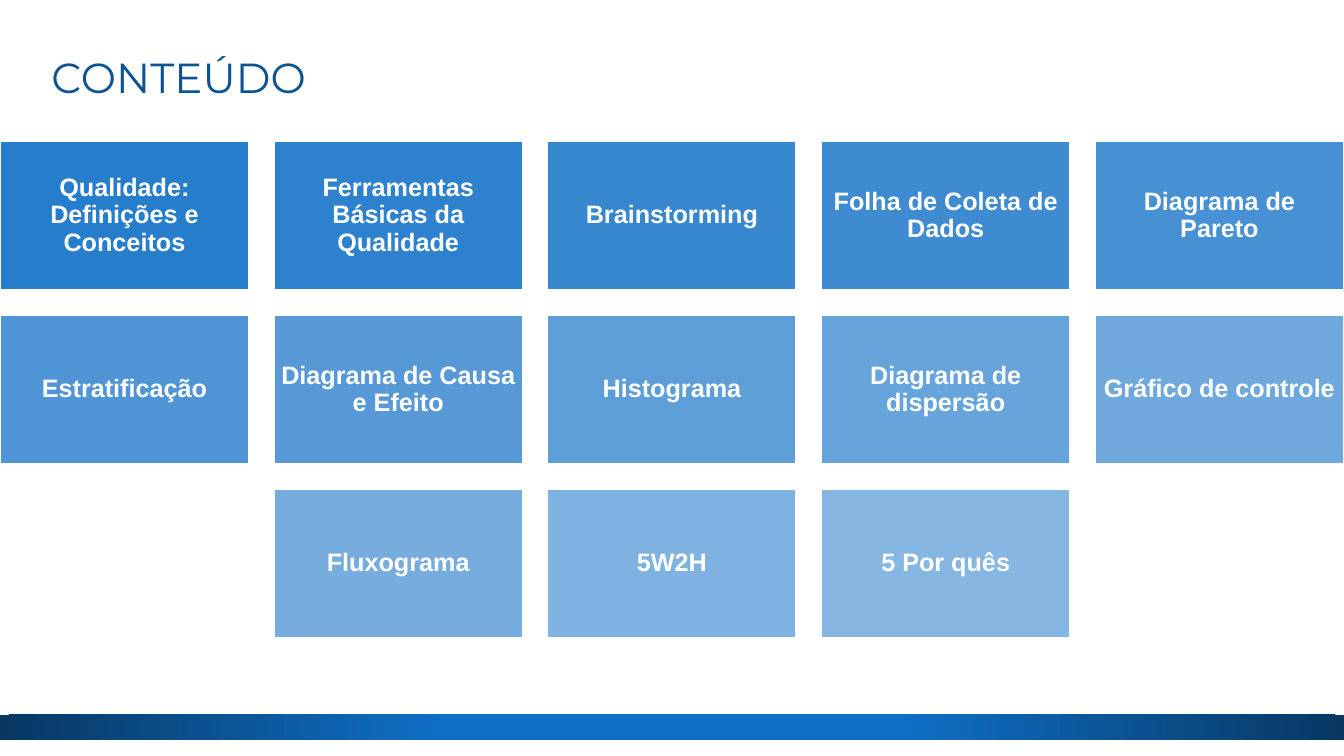
from lxml import etree
from pptx import Presentation
from pptx.dml.color import RGBColor
from pptx.enum.shapes import MSO_SHAPE
from pptx.enum.text import MSO_ANCHOR, PP_ALIGN
from pptx.oxml.ns import qn
from pptx.util import Inches, Pt

RECT = MSO_SHAPE.RECTANGLE
MIDDLE = MSO_ANCHOR.MIDDLE
LEFT, CENTER = PP_ALIGN.LEFT, PP_ALIGN.CENTER
WIDTH = 13.33
BLUE = "0F6FC6"


def paint(color, code):
    color.rgb = RGBColor.from_string(code)


def write(shape, text, code, align, font):
    frame = shape.text_frame
    frame.text = text
    frame.word_wrap = True
    frame.vertical_anchor = MIDDLE
    par = frame.paragraphs[0]
    par.alignment = align
    par.line_spacing = 0.9
    for key, value in font.items():
        setattr(par.runs[0].font, key, value)
    paint(par.runs[0].font.color, code)


deck = Presentation()
deck.slide_width, deck.slide_height = Inches(WIDTH), Inches(7.5)
slide = deck.slides.add_slide(deck.slide_layouts[5])

# Footer band with a radial gradient
band = slide.shapes.add_shape(RECT, 0, Inches(7.09), Inches(WIDTH), Inches(0.25))
band.shadow.inherit = False
band.line.fill.background()
band.fill.gradient()
for stop, (place, code) in zip(band.fill.gradient_stops, [(0.34, BLUE), (1, "083763")]):
    stop.position = place
    paint(stop.color, code)
grad = band.element.spPr.find(qn("a:gradFill"))
grad.remove(grad.find(qn("a:lin")))
ring = etree.SubElement(grad, qn("a:path"), path="circle")
etree.SubElement(ring, qn("a:fillToRect"), {side: "50000" for side in "ltrb"})

# Title
title = slide.shapes.title
title.left, title.top = Inches(0.41), Inches(0.16)
title.width, title.height = Inches(12.47), Inches(1.26)
write(title, "CONTEÚDO", "0B5394", LEFT, {"name": "Montserrat", "size": Pt(30)})

# Topic grid: rows are centred, and each box is paler than the one before
rows = [
    ["Qualidade: Definições e Conceitos", "Ferramentas Básicas da Qualidade",
     "Brainstorming", "Folha de Coleta de Dados", "Diagrama de Pareto"],
    ["Estratificação", "Diagrama de Causa e Efeito", "Histograma",
     "Diagrama de dispersão", "Gráfico de controle"],
    ["Fluxograma", "5W2H", "5 Por quês"],
]
BOX_W, BOX_H = 2.47, 1.48
step = (WIDTH - BOX_W) / 4
last = sum(len(row) for row in rows) - 1
bold = {"name": "Arial", "size": Pt(18), "bold": True}
count = 0
for r, row in enumerate(rows):
    start = (5 - len(row)) / 2 * step
    for c, topic in enumerate(row):
        box = slide.shapes.add_shape(RECT, Inches(start + c * step), Inches(1.4 + r * 1.725),
                                     Inches(BOX_W), Inches(BOX_H))
        box.shadow.inherit = False
        box.fill.solid()
        paint(box.fill.fore_color, BLUE)
        tint = box.element.spPr.find(qn("a:solidFill"))[0]
        alpha = 90 - 40 * count / last
        etree.SubElement(tint, qn("a:alpha"), val=str(round(alpha * 1000)))
        paint(box.line.color, "FFFFFF")
        box.line.width = Pt(1.5)
        for side in ("left", "top", "right", "bottom"):
            setattr(box.text_frame, "margin_" + side, Inches(0.07))
        write(box, topic, "FFFFFF", CENTER, bold)
        count += 1

deck.save("out.pptx")
